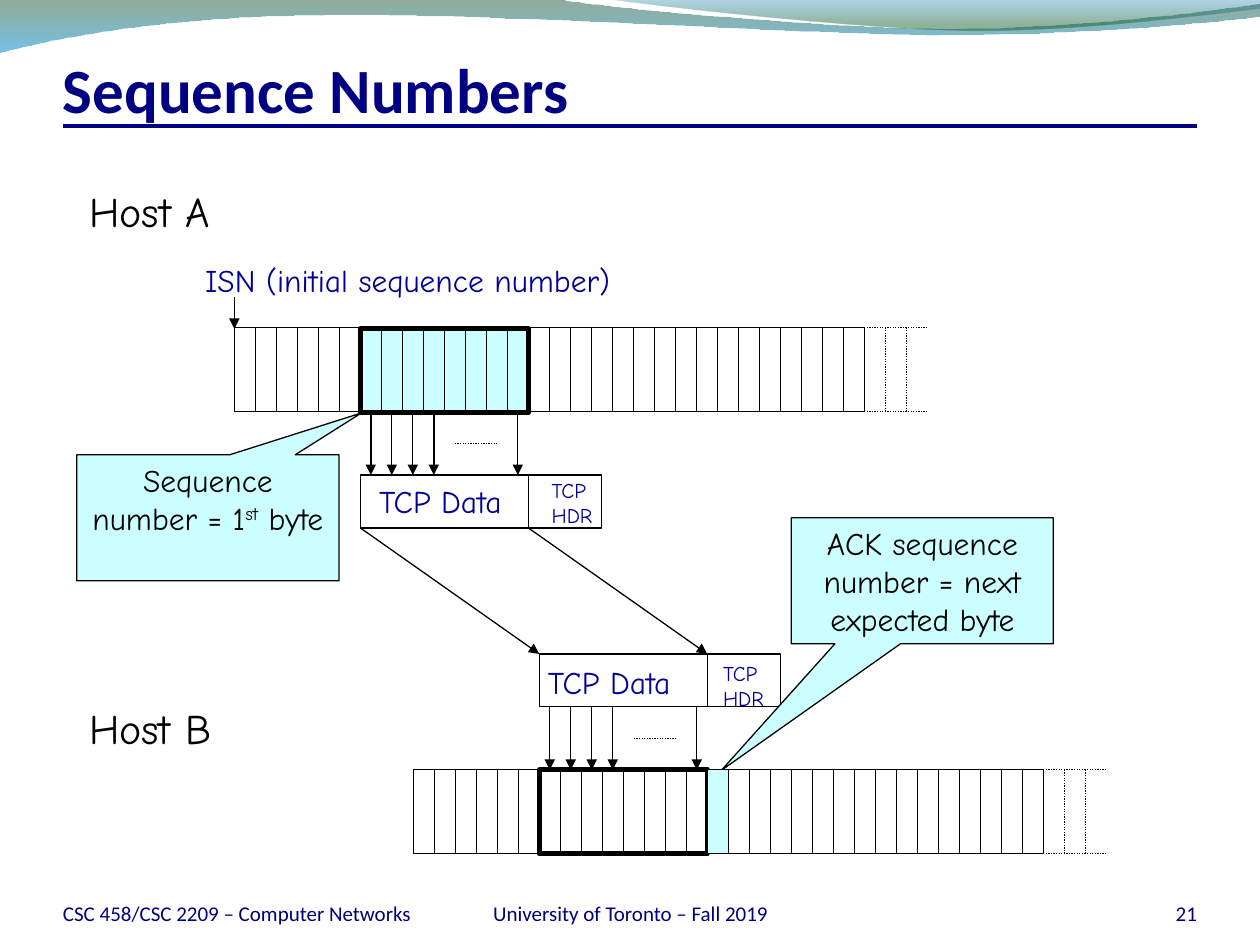
from dataclasses import dataclass
from typing import Any

from lxml import etree
from pptx import Presentation
from pptx import util as u
from pptx.dml.color import RGBColor
from pptx.enum import dml, shapes, text
from pptx.oxml import ns


@dataclass(frozen=True)
class Theme:
    title: str = "000082"
    footer: str = "00007C"
    label: str = "000099"
    ink: str = "000000"
    paper: str = "FFFFFF"
    accent: str = "CCFFFF"
    heading_font: str = "Calibri"
    hand_font: str = "Comic Neue"
    title_size: float = 36
    host_size: float = 24
    body_size: float = 18
    small_size: float = 12
    hairline: float = 0.75
    rule: float = 2.25
    heavy: float = 3


@dataclass(frozen=True)
class Wave:
    start: tuple[float, float]
    segments: list[tuple]
    stops: list[tuple[int, str, int]]


@dataclass(frozen=True)
class Label:
    lines: list[str]
    box: tuple[float, float, float, float]
    size: float
    color: str


@dataclass(frozen=True)
class Footer:
    content: str
    left: float
    width: float
    align: Any


@dataclass(frozen=True)
class Callout:
    runs: list[tuple[str, int]]
    left: float
    top: float
    pointer: tuple[float, float]


@dataclass(frozen=True)
class Stream:
    left: float
    top: float
    packet_top: float
    arrows: tuple[float, float]

    @property
    def segment(self) -> float:
        return self.left + 6 * CELL

    @property
    def packet_end(self) -> float:
        return self.segment + SEGMENT


THEME = Theme()
CELL = 1 / 6
SEGMENT = 8 * CELL
ROW = 4 * CELL
PACKET = 0.42
HEADER = 0.58
LEFT, CENTER, RIGHT = text.PP_ALIGN.LEFT, text.PP_ALIGN.CENTER, text.PP_ALIGN.RIGHT

WAVES = [
    Wave((0, -0.01), [
        (4.4, -0.01), (4.76, 0.06, 6.64, 0.23, 7.58, 0.23), (8.53, 0.23, 9.58, 0.09, 10, 0.03),
        (10.01, 0.13), (9.83, 0.16, 8.7, 0.28, 7.46, 0.28), (6.22, 0.27, 3.82, 0.1, 2.57, 0.12),
        (1.29, 0.13, 0.46, 0.3, -0.01, 0.42), (0, -0.01),
    ], [(0, "0F461E", 45), (100, "0090D6", 55)]),
    Wave((4.79, -0.01), [
        (5.09, 0.04, 6.82, 0.23, 7.69, 0.24), (8.56, 0.25, 9.61, 0.11, 10, 0.07), (10, -0.01),
        (4.79, -0.01),
    ], [(0, "0076AF", 30), (80, "0D5821", 45)]),
]
FOOTERS = [
    Footer("CSC 458/CSC 2209 – Computer Networks", 0.5, 2.83, LEFT),
    Footer("21", 8.67, 0.83, RIGHT),
    Footer("University of Toronto – Fall 2019", 3.42, 3.17, CENTER),
]
HOST_A = Stream(1.86, 2.6, 3.77, (3.27, 3.77))
HOST_B = Stream(3.28, 6.11, 5.19, (5.61, 6.11))
HOST_LABELS = [
    Label(["Host A"], (0.61, 1.42, 1.29, 0.57), THEME.host_size, THEME.ink),
    Label(["Host B"], (0.61, 5.53, 1.26, 0.57), THEME.host_size, THEME.ink),
]
PACKET_LABELS = [
    Label(["TCP Data"], (2.91, 3.78, 1.28, 0.45), THEME.body_size, THEME.label),
    Label(["TCP Data"], (4.25, 5.21, 1.28, 0.45), THEME.body_size, THEME.label),
]
HEADER_LABELS = [
    Label(["TCP", "HDR"], (4.28, 3.74, 0.56, 0.57), THEME.small_size, THEME.label),
    Label(["TCP", "HDR"], (5.64, 5.19, 0.56, 0.57), THEME.small_size, THEME.label),
]
ISN = Label(["ISN (initial sequence number)"], (1.53, 2.02, 3.68, 0.45), THEME.body_size, THEME.label)
SEQUENCE = Callout([("Sequence number = 1", 0), ("st", 30), (" byte", 0)], 0.61, 3.61, (0.586, -0.832))
ACK = Callout([("ACK sequence number = next expected byte", 0)], 6.28, 4.11, (-0.767, 1.505))


def apply(target: Any, **values: Any) -> None:
    for name, value in values.items():
        setattr(target, name, value)


def style_font(font: Any, face: str, size: float, color: str, bold: bool = False) -> None:
    apply(font, name=face, size=u.Pt(size), bold=bold)
    font.color.rgb = RGBColor.from_string(color)


def style_line(line: Any, color: str, width: float) -> None:
    line.color.rgb = RGBColor.from_string(color)
    line.width = u.Pt(width)


def draw_line(canvas: Any, x1: float, y1: float, x2: float, y2: float, dotted: bool = False,
              arrow: bool = False, color: str = THEME.ink, width: float = THEME.hairline) -> None:
    stroke = canvas.shapes.add_connector(shapes.MSO_CONNECTOR.STRAIGHT, *map(u.Inches, (x1, y1, x2, y2)))
    style_line(stroke.line, color, width)
    if dotted:
        stroke.line.dash_style = dml.MSO_LINE.ROUND_DOT
    if arrow:
        etree.SubElement(stroke.line._get_or_add_ln(), ns.qn("a:tailEnd"), type="triangle")
    etree.SubElement(stroke._element.spPr, ns.qn("a:effectLst"))


def draw_box(slide: Any, left: float, top: float, width: float, height: float, fill: str | None,
             weight: float = THEME.hairline, preset: Any = shapes.MSO_SHAPE.RECTANGLE) -> Any:
    box = slide.shapes.add_shape(preset, *map(u.Inches, (left, top, width, height)))
    box.shadow.inherit = False
    if fill:
        box.fill.solid()
        box.fill.fore_color.rgb = RGBColor.from_string(fill)
    else:
        box.fill.background()
    style_line(box.line, THEME.ink, weight)
    return box


def draw_wave(slide: Any, wave: Wave) -> None:
    corners = [(u.Inches(s[-2]), u.Inches(s[-1])) for s in [wave.start, *wave.segments]]
    builder = slide.shapes.build_freeform(*corners[0])
    builder.add_line_segments(corners[1:], close=True)
    ribbon = builder.convert_to_shape()
    ribbon.shadow.inherit = False
    ribbon.line.fill.background()
    ribbon.fill.background()
    properties = ribbon._element.spPr
    for edge, segment in zip(list(properties.iter(ns.qn("a:lnTo"))), wave.segments):
        if len(segment) == 6:
            bend = etree.Element(ns.qn("a:cubicBezTo"))
            for x, y in zip(segment[::2], segment[1::2]):
                etree.SubElement(bend, ns.qn("a:pt"), x=str(u.Inches(x) - ribbon.left),
                                 y=str(u.Inches(y) - ribbon.top))
            edge.getparent().replace(edge, bend)
    gradient = etree.Element(ns.qn("a:gradFill"), rotWithShape="1")
    stops = etree.SubElement(gradient, ns.qn("a:gsLst"))
    for position, color, opacity in wave.stops:
        stop = etree.SubElement(stops, ns.qn("a:gs"), pos=str(position * 1000))
        tint = etree.SubElement(stop, ns.qn("a:srgbClr"), val=color)
        etree.SubElement(tint, ns.qn("a:alpha"), val=str(opacity * 1000))
    etree.SubElement(gradient, ns.qn("a:lin"), ang="5400000", scaled="0")
    properties.replace(properties.find(ns.qn("a:noFill")), gradient)


def draw_heading(slide: Any, content: str, box: tuple, size: float, color: str,
                 align: Any = LEFT, bold: bool = False, inset: float = 0) -> None:
    frame = slide.shapes.add_textbox(*map(u.Inches, box)).text_frame
    apply(frame, word_wrap=True, vertical_anchor=text.MSO_ANCHOR.BOTTOM, margin_left=0,
          margin_right=0, margin_top=u.Inches(inset), margin_bottom=0, text=content)
    frame.paragraphs[0].alignment = align
    style_font(frame.paragraphs[0].runs[0].font, THEME.heading_font, size, color, bold)


def draw_label(slide: Any, label: Label) -> None:
    frame = slide.shapes.add_textbox(*map(u.Inches, label.box)).text_frame
    apply(frame, text="\n".join(label.lines), word_wrap=False, auto_size=text.MSO_AUTO_SIZE.SHAPE_TO_FIT_TEXT)
    for paragraph in frame.paragraphs:
        style_font(paragraph.runs[0].font, THEME.hand_font, label.size, label.color)


def draw_callout(slide: Any, callout: Callout) -> None:
    bubble = draw_box(slide, callout.left, callout.top, 2.08, 1, THEME.accent,
                      preset=shapes.MSO_SHAPE.RECTANGULAR_CALLOUT)
    for index, offset in enumerate(callout.pointer):
        bubble.adjustments[index] = offset
    apply(bubble.text_frame, word_wrap=True, vertical_anchor=text.MSO_ANCHOR.TOP)
    paragraph = bubble.text_frame.paragraphs[0]
    paragraph.alignment = CENTER
    for content, raised in callout.runs:
        run = paragraph.add_run()
        run.text = content
        style_font(run.font, THEME.hand_font, THEME.body_size, THEME.ink)
        if raised:
            run._r.get_or_add_rPr().set("baseline", str(raised * 1000))


def draw_stream(slide: Any, stream: Stream) -> None:
    solid_end, bottom = stream.left + 30 * CELL, stream.top + ROW
    rails = slide.shapes.add_group_shape()
    for start, dotted in ((stream.left, False), (stream.left + 33 * CELL, True)):
        for y in (stream.top, bottom):
            draw_line(rails, start, y, solid_end, y, dotted)
    for tick in range(33):
        x = stream.left + tick * CELL
        draw_line(slide, x, stream.top, x, bottom, dotted=tick > 30)


def draw_arrows(slide: Any, stream: Stream) -> None:
    start, end = stream.arrows
    for byte in (0, 1, 2, 3, 7):
        x = stream.segment + (byte + 0.5) * CELL
        draw_line(slide, x, start, x, end, arrow=True)
    middle = (start + end) / 2
    draw_line(slide, stream.segment + 4.5 * CELL, middle, stream.segment + 6.5 * CELL, middle, dotted=True)


def main() -> None:
    deck = Presentation()
    apply(deck, slide_width=u.Inches(10), slide_height=u.Inches(7.5))
    slide = deck.slides.add_slide(deck.slide_layouts[6])
    hosts = (HOST_A, HOST_B)
    for wave in WAVES:
        draw_wave(slide, wave)
    draw_line(slide, 0.5, 1, 9.5, 1, color=THEME.title, width=THEME.rule)
    for footer in FOOTERS:
        draw_heading(slide, footer.content, (footer.left, 6.95, footer.width, 0.4),
                     THEME.small_size, THEME.footer, footer.align)
    draw_box(slide, HOST_A.segment, 2.61, SEGMENT, ROW, THEME.accent, THEME.heavy)
    draw_heading(slide, "Sequence Numbers", (0.5, 0.33, 9, 0.67), THEME.title_size,
                 THEME.title, bold=True, inset=0.05)
    for host in hosts:
        draw_stream(slide, host)
    for label in HOST_LABELS:
        draw_label(slide, label)
    for host in hosts:
        draw_box(slide, host.segment, host.packet_top, SEGMENT, PACKET, THEME.paper)
    for sent, received in ((HOST_A.segment, HOST_B.segment), (HOST_A.packet_end, HOST_B.packet_end)):
        draw_line(slide, sent, HOST_A.packet_top + PACKET, received, HOST_B.packet_top, arrow=True)
    for host in hosts:
        draw_arrows(slide, host)
    for label in PACKET_LABELS:
        draw_label(slide, label)
    for host, label in zip(hosts, HEADER_LABELS):
        draw_box(slide, host.packet_end, host.packet_top, HEADER, PACKET, THEME.paper)
        draw_label(slide, label)
    draw_label(slide, ISN)
    draw_line(slide, HOST_A.left, 2.36, HOST_A.left, 2.61, arrow=True)
    draw_callout(slide, SEQUENCE)
    draw_box(slide, HOST_B.segment, HOST_B.top, SEGMENT, ROW, None, THEME.heavy)
    draw_callout(slide, ACK)
    draw_box(slide, HOST_B.packet_end, HOST_B.top, CELL, ROW, THEME.accent)
    deck.save("out.pptx")


if __name__ == "__main__":
    main()
